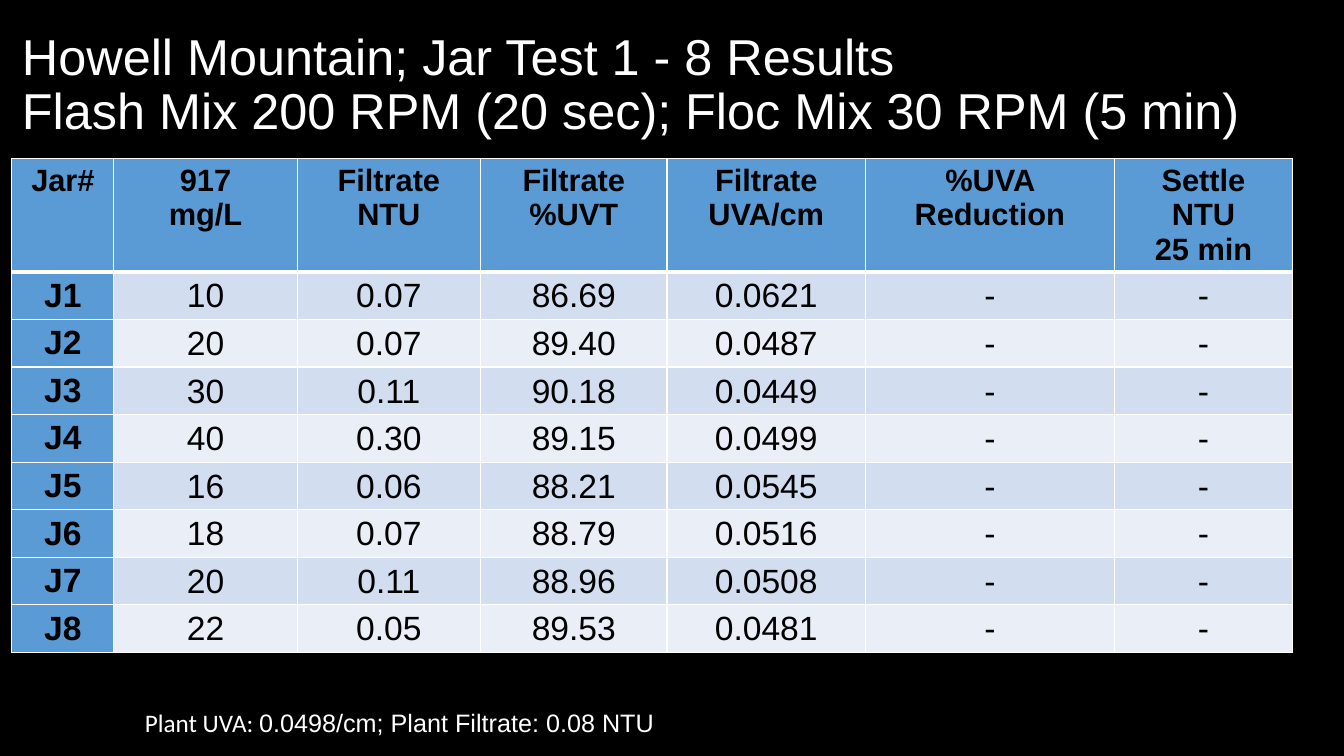
from lxml.etree import SubElement
from pptx import Presentation
from pptx.dml.color import RGBColor
from pptx.enum.text import MSO_ANCHOR as Anchor, MSO_AUTO_SIZE as AutoSize, PP_ALIGN as Align
from pptx.oxml.ns import qn
from pptx.util import Cm, Pt

WHITE, BLACK = "FFFFFF", "000000"
HEADING_BLUE = "5B9BD5"
BANDS = ("D2DEEF", "EAEFF7")

HEADINGS = ["Jar#", "917\nmg/L", "Filtrate\nNTU", "Filtrate\n%UVT",
            "Filtrate\nUVA/cm", "%UVA Reduction", "Settle\nNTU\n25 min"]
COLUMN_WIDTHS = [2.57, 4.62, 4.62, 4.7, 5.0, 6.27, 4.5]
ROW_HEIGHT = 1.04
# Dose, filtrate NTU, filtrate %UVT, filtrate UVA/cm
JAR_RESULTS = [
    ("10", "0.07", "86.69", "0.0621"),
    ("20", "0.07", "89.40", "0.0487"),
    ("30", "0.11", "90.18", "0.0449"),
    ("40", "0.30", "89.15", "0.0499"),
    ("16", "0.06", "88.21", "0.0545"),
    ("18", "0.07", "88.79", "0.0516"),
    ("20", "0.11", "88.96", "0.0508"),
    ("22", "0.05", "89.53", "0.0481"),
]


def rgb(color):
    return RGBColor.from_string(color)


def add_text(paragraph, text, size=18, color=WHITE, font="Arial", bold=False,
             align=Align.LEFT, spacing=None):
    """Add text to a paragraph; each newline becomes a line break."""
    paragraph.alignment = align
    if spacing:
        paragraph.line_spacing = spacing
    for number, line in enumerate(text.split("\n")):
        if number:
            paragraph.add_line_break()
        run = paragraph.add_run()
        run.text = line
        run.font.size = Pt(size)
        run.font.name = font
        run.font.bold = bold
        run.font.color.rgb = rgb(color)


def add_borders(cell, top, bottom):
    properties = cell._tc.get_or_add_tcPr()
    for side, width in (("L", 1), ("R", 1), ("T", top), ("B", bottom)):
        line = SubElement(properties, qn(f"a:ln{side}"), w=str(Pt(width)))
        fill = SubElement(line, qn("a:solidFill"))
        SubElement(fill, qn("a:srgbClr"), val=WHITE)


def fill_cell(cell, text, fill, size, bold, top=1, bottom=1):
    add_borders(cell, top, bottom)
    cell.fill.solid()
    cell.fill.fore_color.rgb = rgb(fill)
    frame = cell.text_frame
    for number, line in enumerate(text.split("\n")):
        paragraph = frame.add_paragraph() if number else frame.paragraphs[0]
        add_text(paragraph, line, size=size, color=BLACK, bold=bold, align=Align.CENTER)


def fill_value_cell(cell, text, fill, top):
    cell.vertical_anchor = Anchor.MIDDLE
    cell.margin_left = cell.margin_right = cell.margin_top = Cm(0.03)
    cell.margin_bottom = 0
    fill_cell(cell, text, fill, 24, False, top=top)


def add_title(slide, text):
    title = slide.shapes.title
    title.left, title.top, title.width, title.height = Cm(0.3), Cm(0.33), Cm(33.1), Cm(3.68)
    frame = title.text_frame
    frame.auto_size = AutoSize.NONE
    frame.vertical_anchor = Anchor.MIDDLE
    add_text(frame.paragraphs[0], text, size=36, spacing=0.9)


def add_results(slide):
    height = Cm(13.21)
    holder = slide.shapes.add_table(len(JAR_RESULTS) + 1, len(HEADINGS), Cm(0.3), Cm(3.99),
                                    Cm(sum(COLUMN_WIDTHS)), height)
    results = holder.table
    results.first_col = True
    for column, width in zip(results.columns, COLUMN_WIDTHS):
        column.width = Cm(width)
    for row in results.rows:
        row.height = Cm(ROW_HEIGHT)
    holder.height = height

    # Heading row
    for column, heading in enumerate(HEADINGS):
        fill_cell(results.cell(0, column), heading, HEADING_BLUE, 22, True, bottom=3)

    # One banded row per jar; reduction and settling were not measured
    for jar, values in enumerate(JAR_RESULTS, start=1):
        top = 3 if jar == 1 else 1
        fill_cell(results.cell(jar, 0), f"J{jar}", HEADING_BLUE, 24, True, top=top)
        for column, value in enumerate((*values, "-", "-"), start=1):
            fill_value_cell(results.cell(jar, column), value, BANDS[(jar - 1) % 2], top)


def add_plant_note(slide):
    note = slide.shapes.add_textbox(Cm(3.4), Cm(17.7), Cm(13.46), Cm(1.02))
    frame = note.text_frame
    frame.word_wrap = False
    frame.auto_size = AutoSize.SHAPE_TO_FIT_TEXT
    paragraph = frame.paragraphs[0]
    add_text(paragraph, "Plant UVA: ", font="Calibri")
    add_text(paragraph, "0.0498/cm; Plant Filtrate: 0.08 NTU")


def main():
    deck = Presentation()
    deck.slide_width, deck.slide_height = Cm(33.87), Cm(19.05)
    slide = deck.slides.add_slide(deck.slide_layouts[5])
    slide.background.fill.solid()
    slide.background.fill.fore_color.rgb = rgb(BLACK)

    add_title(slide, "Howell Mountain; Jar Test 1 - 8 Results\n"
                     "Flash Mix 200 RPM (20 sec); Floc Mix 30 RPM (5 min)")
    add_results(slide)
    add_plant_note(slide)
    deck.save("out.pptx")


if __name__ == "__main__":
    main()
